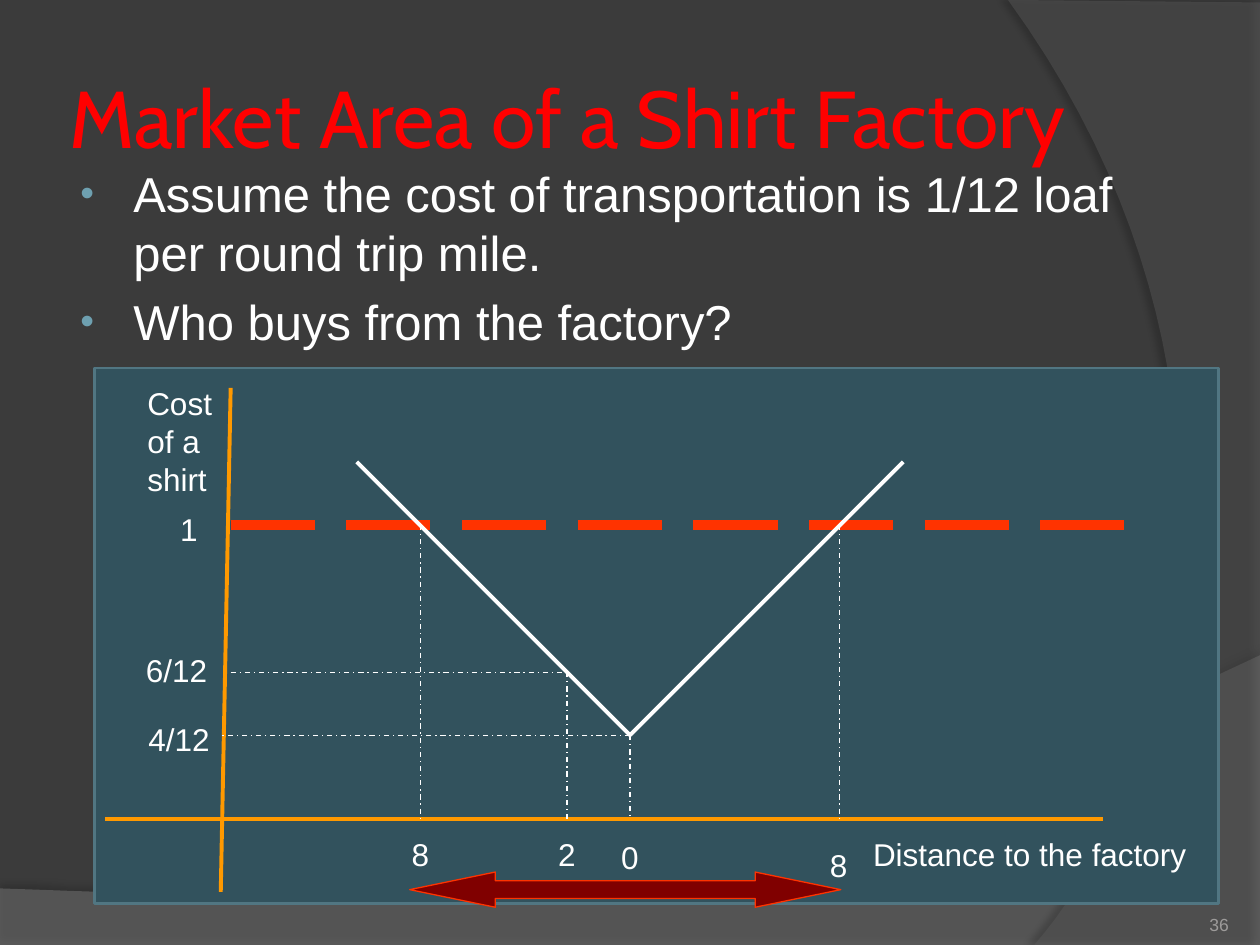
import lxml.etree
import pptx
import pptx.dml.color
import pptx.enum.dml
import pptx.enum.shapes
import pptx.enum.text
import pptx.oxml
import pptx.oxml.ns
import pptx.util

Cm = pptx.util.Cm
Pt = pptx.util.Pt
Rgb = pptx.dml.color.RGBColor.from_string
qn = pptx.oxml.ns.qn
Dash = pptx.enum.dml.MSO_LINE
Shape = pptx.enum.shapes.MSO_SHAPE
Anchor = pptx.enum.text.MSO_ANCHOR
Align = pptx.enum.text.PP_ALIGN


class Theme:
    background = Rgb("3B3B3B")
    wave, side = Rgb("7F7F7F"), Rgb("5E5E5E")
    panel, panel_edge = Rgb("32525D"), Rgb("517682")
    title, text, bullet, number = Rgb("FF0000"), Rgb("FFFFFF"), Rgb("6EA0B0"), Rgb("9D9B9A")
    axis, price, arrow = Rgb("FF9900"), Rgb("FF3300"), Rgb("800000")
    title_font, text_font = "Cabin", "Arial"
    title_size, body_size, label_size, number_size = Pt(46), Pt(28), Pt(18), Pt(10)


def add_line(start, end, color, width, dash=None):
    line = page.shapes.add_connector(
        pptx.enum.shapes.MSO_CONNECTOR.STRAIGHT, *map(Cm, start + end))
    line.line.color.rgb = color
    line.line.width = Pt(width)
    if dash:
        line.line.dash_style = dash
    lxml.etree.SubElement(line._element.spPr, qn("a:effectLst"))


def add_text(lines, left, top, width, height, size, color=Theme.text, wrap=True):
    box = page.shapes.add_textbox(Cm(left), Cm(top), Cm(width), Cm(height))
    box.text_frame.word_wrap = wrap
    box.text_frame.text = "\n".join(lines)
    for para in box.text_frame.paragraphs:
        para.font.name = Theme.text_font
        para.font.size = size
        para.font.color.rgb = color
    return box.text_frame


deck = pptx.Presentation()
deck.slide_width, deck.slide_height = Cm(25.4), Cm(19.05)
page = deck.slides.add_slide(deck.slide_layouts[5])
page.background.fill.solid()
page.background.fill.fore_color.rgb = Theme.background

# Backdrop: each outline is closed by a Bezier curve from its last corner
backdrop = [
    ([(0, 17.91), (0, 19.05), (25.4, 19.05), (25.4, 13.21)],
     [(14.2, 18.52), (9.93, 18.26), (0, 17.91)], Theme.wave, 45, (35, 4, 3.5, 270)),
    ([(25.4, 0.05), (25.4, 19.05), (20.85, 19.05)],
     [(23.75, 15.72), (25.86, 7.62), (20.32, 0)], Theme.side, 40, (45, 4, 4, 180)),
]
steps = 40
for corners, curve, color, opacity, (shade, blur, distance, angle) in backdrop:
    controls = [corners[-1]] + curve
    points = list(corners)
    for step in range(1, steps + 1):
        t = step / steps
        weights = ((1 - t) ** 3, 3 * t * (1 - t) ** 2, 3 * t * t * (1 - t), t ** 3)
        points.append(tuple(sum(w * c[axis] for w, c in zip(weights, controls))
                            for axis in (0, 1)))
    points = [(Cm(x), Cm(y)) for x, y in points]
    builder = page.shapes.build_freeform(*points[0])
    builder.add_line_segments(points[1:], close=True)
    outline = builder.convert_to_shape()
    outline.fill.solid()
    outline.fill.fore_color.rgb = color
    outline.line.fill.background()
    fill_color = outline._element.spPr.find(qn("a:solidFill"))[0]
    lxml.etree.SubElement(fill_color, qn("a:alpha"), val=str(opacity * 1000))
    effects = lxml.etree.SubElement(outline._element.spPr, qn("a:effectLst"))
    shadow = lxml.etree.SubElement(
        effects, qn("a:outerShdw"), blurRad=str(Pt(blur)), dist=str(Pt(distance)),
        dir=str(angle * 60000), algn="ctr", rotWithShape="0")
    shadow_color = lxml.etree.SubElement(shadow, qn("a:srgbClr"), val="000000")
    lxml.etree.SubElement(shadow_color, qn("a:alpha"), val=str(shade * 1000))

# Chart panel
panel = page.shapes.add_shape(Shape.RECTANGLE, Cm(1.91), Cm(7.42), Cm(22.66), Cm(10.79))
panel.shadow.inherit = False
panel.fill.solid()
panel.fill.fore_color.rgb = Theme.panel
panel.line.color.rgb = Theme.panel_edge
panel.line.width = Pt(1.5)

# Title
title = page.shapes.title
title.left, title.top, title.width, title.height = Cm(1.27), Cm(0.76), Cm(20.75), Cm(3.18)
frame = title.text_frame
frame.text = "Market Area of a Shirt Factory"
frame.vertical_anchor = Anchor.MIDDLE
frame.auto_size = pptx.enum.text.MSO_AUTO_SIZE.NONE
frame.margin_left = frame.margin_right = frame.margin_top = frame.margin_bottom = Cm(0.13)
para = frame.paragraphs[0]
para.alignment = Align.LEFT
para.font.name = Theme.title_font
para.font.size = Theme.title_size
para.font.color.rgb = Theme.title

# Bullets
body = add_text(["Assume the cost of transportation is 1/12 loaf per round trip mile.",
                 "Who buys from the factory?"],
                1.27, 3.18, 22.86, 4.67, Theme.body_size)
for para in body.paragraphs:
    para.space_before = Pt(5.6)
    properties = para._p.get_or_add_pPr()
    properties.set("marL", str(Cm(1.17)))
    properties.set("indent", str(Cm(-1.07)))
    bullet = [
        f'<a:buClr {pptx.oxml.ns.nsdecls("a")}><a:srgbClr val="{Theme.bullet}"/></a:buClr>',
        f'<a:buSzPct {pptx.oxml.ns.nsdecls("a")} val="80000"/>',
        f'<a:buFont {pptx.oxml.ns.nsdecls("a")} typeface="{Theme.text_font}"/>',
        f'<a:buChar {pptx.oxml.ns.nsdecls("a")} char="•"/>',
    ]
    defaults = properties.find(qn("a:defRPr"))
    for part in bullet:
        defaults.addprevious(pptx.oxml.parse_xml(part))

# Axes and the home-made price
base, cost_axis, price, apex = 16.51, 4.65, 10.58, (12.7, 14.82)
add_line((2.12, base), (22.23, base), Theme.axis, 2.25)
add_line((4.45, 17.98), (cost_axis, 7.82), Theme.axis, 2.25)
add_line((cost_axis, price), (22.66, price), Theme.price, 6, Dash.LONG_DASH)

# Factory cost rising on both sides
for reach in (-5.51, 5.51):
    add_line(apex, (apex[0] + reach, apex[1] - 5.51), Theme.text, 2.25)

# Guides down to the distance axis and across to the cost axis
two_miles = (11.43, 13.55)
for start, end in [
    (apex, (apex[0], base)),
    ((16.93, price), (16.93, base)),
    ((8.47, price), (8.47, base)),
    (apex, (4.45, apex[1])),
    (two_miles, (two_miles[0], base)),
    ((cost_axis, two_miles[1]), two_miles),
]:
    add_line(start, end, Theme.text, 0.75, Dash.DASH_DOT)

# Axis names and values
add_text(["Cost of a shirt"], 2.72, 7.62, 1.96, 2.54, Theme.label_size)
for label, left, top, width in [
    ("Distance to the factory", 17.35, 16.71, 6.83),
    ("8", 8.05, 16.71, 0.86),
    ("2", 11, 16.71, 0.86),
    ("0", 12.27, 16.76, 0.86),
    ("8", 16.48, 16.94, 0.86),
    ("1", 3.38, 10.16, 0.86),
    ("6/12", 2.69, 13, 1.75),
    ("4/12", 2.74, 14.4, 1.75),
]:
    add_text([label], left, top, width, 1.02, Theme.label_size, wrap=False)

# Market area arrow
arrow = page.shapes.add_shape(Shape.LEFT_RIGHT_ARROW, Cm(8.26), Cm(17.58), Cm(8.69), Cm(0.71))
arrow.adjustments[0], arrow.adjustments[1] = 0.5, 2.43
arrow.shadow.inherit = False
arrow.fill.solid()
arrow.fill.fore_color.rgb = Theme.arrow
arrow.line.color.rgb = Theme.price
arrow.line.width = Pt(0.75)

# Page number
number = add_text(["36"], 22.66, 17.83, 2.11, 1.02, Theme.number_size, Theme.number)
number.margin_left = number.margin_right = number.margin_top = number.margin_bottom = 0
number.vertical_anchor = Anchor.BOTTOM
number.paragraphs[0].alignment = Align.RIGHT

deck.save("out.pptx")
